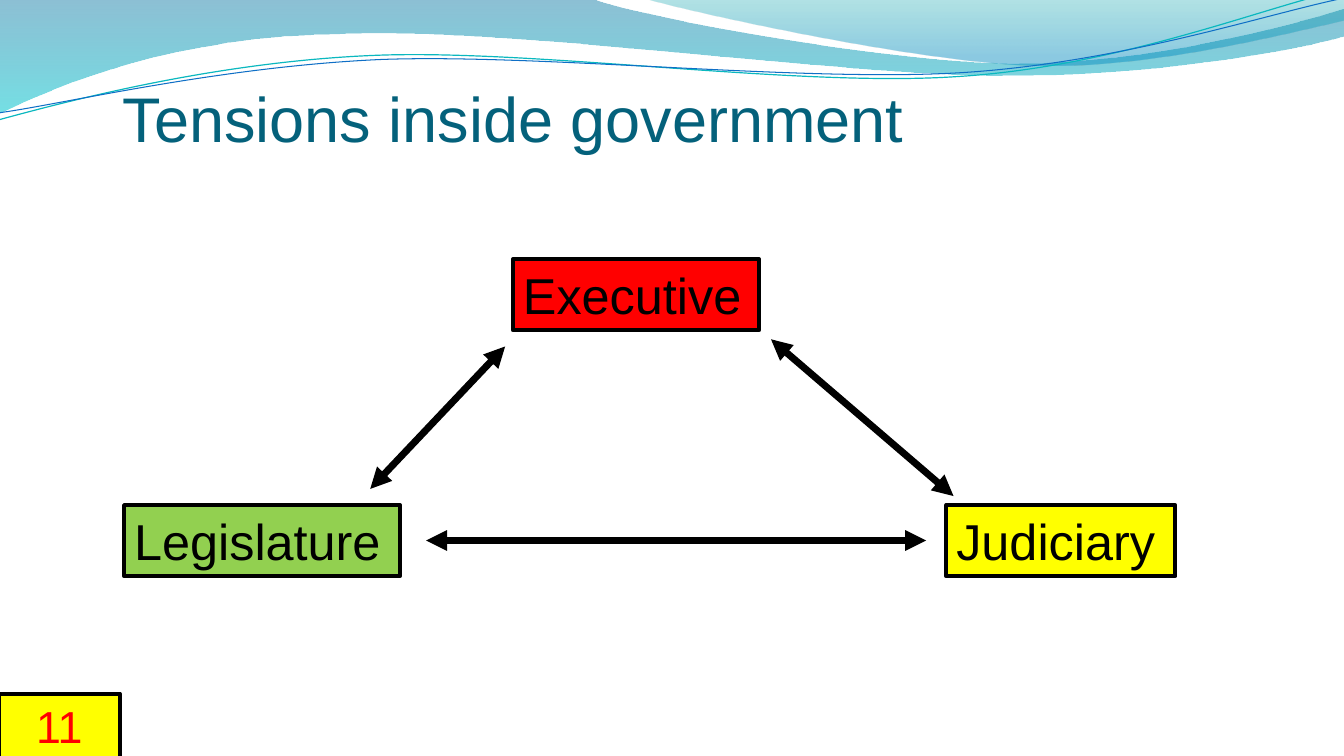
from lxml import etree
from pptx import Presentation
from pptx.dml.color import RGBColor
from pptx.enum.shapes import MSO_CONNECTOR, MSO_SHAPE
from pptx.enum.text import MSO_ANCHOR, PP_ALIGN
from pptx.oxml.ns import qn
from pptx.util import Cm, Pt

RECTANGLE = MSO_SHAPE.RECTANGLE
STRAIGHT = MSO_CONNECTOR.STRAIGHT
LEFT, CENTER = PP_ALIGN.LEFT, PP_ALIGN.CENTER
TOP, BOTTOM = MSO_ANCHOR.TOP, MSO_ANCHOR.BOTTOM

LEFT_WAVE = [
    (0, 0), (14.91, -0.03),
    (16.1, 0.43, 22.48, 1.6, 25.68, 1.6),
    (28.91, 1.6, 32.46, 0.66, 33.86, 0.23),
    (33.91, 0.91),
    (33.3, 1.12, 29.46, 1.93, 25.25, 1.91),
    (21.06, 1.91, 12.93, 0.71, 8.71, 0.86),
    (4.37, 0.91, 1.55, 2.11, -0.03, 2.87),
    (0, 0),
]
RIGHT_WAVE = [
    (16.23, -0.03),
    (17.25, 0.28, 23.09, 1.57, 26.04, 1.65),
    (28.98, 1.75, 32.56, 0.81, 33.86, 0.53),
    (33.86, 0), (16.23, -0.03),
]
TEAL_STRAND = [
    (-0.03, 3.02),
    (1.63, 2.57, 5.36, 1.57, 9.37, 1.4),
    (13.39, 1.22, 20.07, 2.21, 24.13, 1.93),
    (28.19, 1.68, 31.8, 0.2, 33.81, -0.25),
]
BLUE_STRAND = [
    (0, 2.84),
    (1.6, 2.62, 5.54, 1.68, 9.6, 1.5),
    (13.64, 1.35, 20.22, 2.08, 24.26, 1.83),
    (28.32, 1.57, 31.88, 0.36, 33.88, -0.05),
]


def color(value):
    """Return the colour for a hex string."""
    return RGBColor.from_string(value)


def add_outline(slide, segments, close):
    """Add a freeform of lines (two numbers) and cubic curves (six numbers)."""
    start, *points = [(Cm(x), Cm(y)) for segment in segments
                      for x, y in zip(segment[::2], segment[1::2])]
    builder = slide.shapes.build_freeform(*start, scale=1.0)
    builder.add_line_segments(points, close=close)
    sp = builder.convert_to_shape()
    sp.shadow.inherit = False
    steps = iter(list(sp._element.iter(qn("a:lnTo"))))
    for segment in segments[1:]:
        step = next(steps)
        if len(segment) == 6:
            step.addprevious(curve := etree.Element(qn("a:cubicBezTo")))
            for node in (step, next(steps), next(steps)):
                curve.append(node[0])
                node.getparent().remove(node)
    return sp


def add_wave(slide, segments, stops):
    """Add a closed wave with a translucent downward gradient."""
    sp = add_outline(slide, segments, True)
    sp.line.fill.background()
    sp.fill.gradient()
    sp.fill.gradient_angle = 270
    for stop, (position, hue, _) in zip(sp.fill.gradient_stops, stops):
        stop.position = position
        stop.color.rgb = color(hue)
    for node, (_, _, opacity) in zip(sp._element.iter(qn("a:srgbClr")), stops):
        etree.SubElement(node, qn("a:alpha")).set("val", str(opacity * 1000))


def add_strand(slide, segments, hue, width):
    """Add a thin curved line."""
    sp = add_outline(slide, segments, False)
    sp.fill.background()
    sp.line.color.rgb = color(hue)
    sp.line.width = Pt(width)


def set_text(sp, text, size, hue="000000", align=LEFT, anchor=TOP):
    """Write one formatted paragraph into a shape."""
    tf = sp.text_frame
    tf.word_wrap = True
    tf.vertical_anchor = anchor
    p = tf.paragraphs[0]
    p.alignment = align
    r = p.add_run()
    r.text = text
    r.font.name = "Arial"
    r.font.size = Pt(size)
    r.font.color.rgb = color(hue)


def add_title(slide, text):
    """Add the slide title."""
    sp = slide.shapes.add_textbox(Cm(3.09), Cm(2.11), Cm(30.76), Cm(1.8))
    tf = sp.text_frame
    tf.margin_left = tf.margin_right = tf.margin_bottom = 0
    set_text(sp, text, 45, hue="04617B", anchor=BOTTOM)


def add_box(slide, text, left, top, width, height=1.79, fill="FFFF00", size=36, **style):
    """Add a filled box with a black border and a label."""
    sp = slide.shapes.add_shape(RECTANGLE, Cm(left), Cm(top), Cm(width), Cm(height))
    sp.shadow.inherit = False
    sp.fill.solid()
    sp.fill.fore_color.rgb = color(fill)
    sp.line.color.rgb = color("000000")
    sp.line.width = Pt(3)
    set_text(sp, text, size, **style)


def add_double_arrow(slide, x1, y1, x2, y2):
    """Add a thick line with an arrowhead at each end."""
    line = slide.shapes.add_connector(STRAIGHT, Cm(x1), Cm(y1), Cm(x2), Cm(y2))
    line.line.color.rgb = color("000000")
    line.line.width = Pt(5)
    ln = line.line._get_or_add_ln()
    for end in ("a:headEnd", "a:tailEnd"):
        etree.SubElement(ln, qn(end)).set("type", "triangle")
    etree.SubElement(ln.getparent(), qn("a:effectLst"))


def main():
    """Build the slide and save it."""
    prs = Presentation()
    prs.slide_width, prs.slide_height = Cm(33.87), Cm(19.05)
    slide = prs.slides.add_slide(prs.slide_layouts[6])

    add_wave(slide, LEFT_WAVE, [(0, "0074A1", 45), (1, "00C6CF", 55)])
    add_wave(slide, RIGHT_WAVE, [(0, "00A1A9", 30), (0.8, "008BBF", 45)])
    add_strand(slide, TEAL_STRAND, "0AB8BF", 0.85)
    add_strand(slide, BLUE_STRAND, "0F6FC6", 0.75)
    add_title(slide, "Tensions inside government")

    add_box(slide, "Legislature", 3.13, 12.73, 6.95, fill="92D050")
    add_box(slide, "Executive", 12.93, 6.53, 6.2, fill="FF0000")
    add_box(slide, "Judiciary", 23.85, 12.73, 5.77)
    add_double_arrow(slide, 12.73, 8.73, 9.33, 12.32)
    add_double_arrow(slide, 24.03, 12.5, 19.43, 8.55)
    add_double_arrow(slide, 23.34, 13.62, 10.74, 13.62)
    add_box(slide, "11", -0.03, 17.48, 3.05, 1.63, size=32, hue="FF0000", align=CENTER)

    prs.save("out.pptx")


if __name__ == "__main__":
    main()
